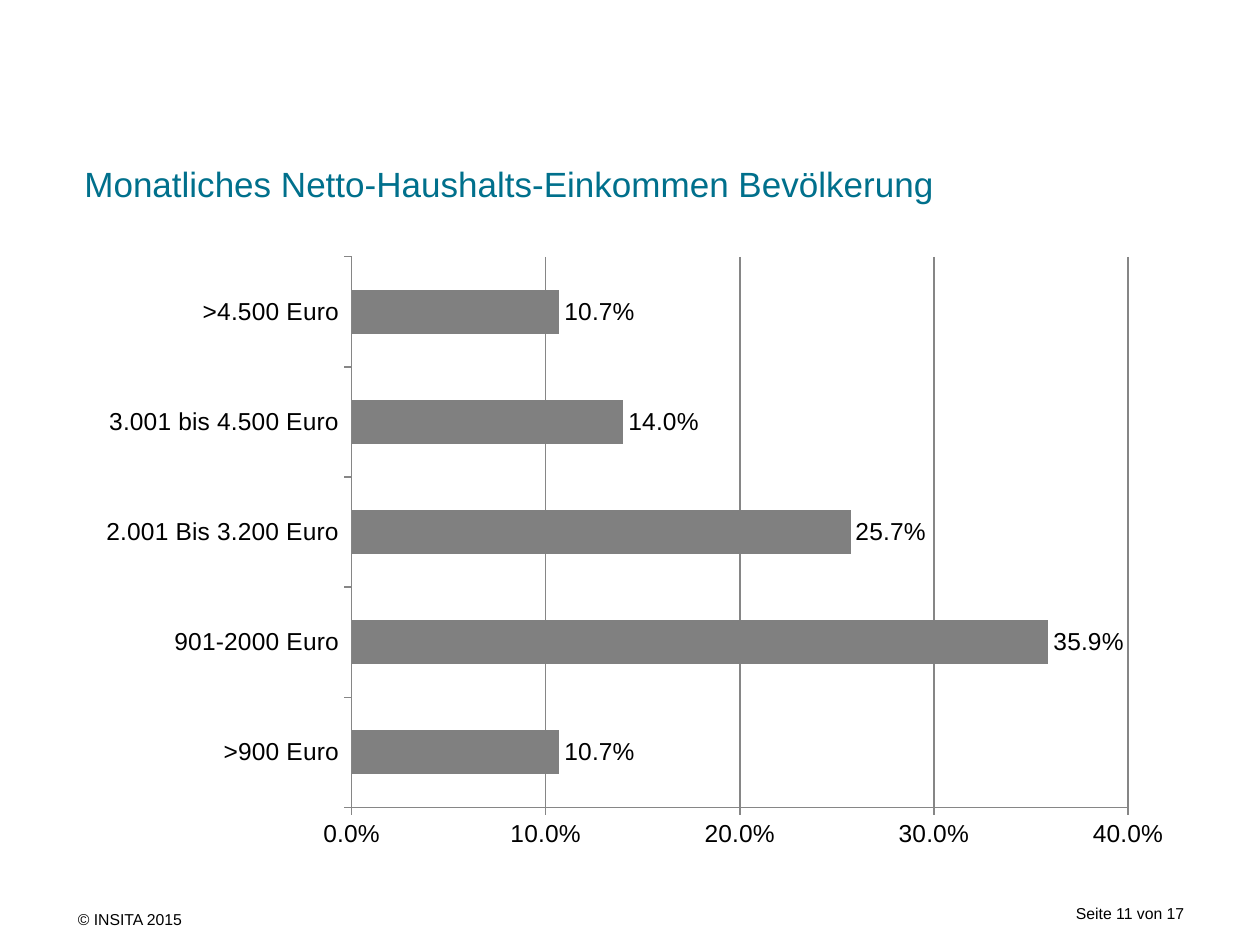
from dataclasses import dataclass

from pptx import Presentation
from pptx.chart.data import CategoryChartData
from pptx.dml.color import RGBColor
from pptx.enum import chart as charts, text
from pptx.util import Cm, Pt


@dataclass(frozen=True)
class Theme:
    font: str = "Arial"
    ink: str = "000000"
    accent: str = "00708C"
    bar: str = "808080"
    line: str = "868686"
    title_size: int = 20
    chart_size: int = 14
    footer_size: int = 9


THEME = Theme()
PERCENT = "0.0%"
INCOME_SHARES = {
    ">900 Euro": 0.107,
    "901-2000 Euro": 0.359,
    "2.001 Bis 3.200 Euro": 0.257,
    "3.001 bis 4.500 Euro": 0.14,
    ">4.500 Euro": 0.107,
}


def box(left, top, width, height):
    return Cm(left), Cm(top), Cm(width), Cm(height)


def format_font(font, size, color):
    font.name = THEME.font
    font.size = Pt(size)
    font.bold = False
    font.color.rgb = RGBColor.from_string(color)


def write_text(shape, content, size, color=THEME.ink, wrap=False, line_spacing=None):
    frame = shape.text_frame
    frame.margin_left = frame.margin_right = frame.margin_top = frame.margin_bottom = 0
    frame.auto_size = text.MSO_AUTO_SIZE.NONE
    frame.word_wrap = wrap
    frame.vertical_anchor = text.MSO_ANCHOR.BOTTOM
    paragraph = frame.paragraphs[0]
    paragraph.alignment = text.PP_ALIGN.LEFT
    paragraph.line_spacing = line_spacing
    run = paragraph.add_run()
    run.text = content
    format_font(run.font, size, color)


def place_title(slide, area, content):
    title = slide.shapes.title
    title.left, title.top, title.width, title.height = area
    write_text(title, content, THEME.title_size, THEME.accent, wrap=True, line_spacing=1.2)


def place_footer(slide, area, copyright_line, page_label):
    left, top, width, height = area
    page_width = Cm(3.1)
    owner = slide.shapes.add_textbox(left, top, Cm(10), height)
    write_text(owner, copyright_line, THEME.footer_size)
    page = slide.shapes.add_textbox(
        left + width - page_width, top - Cm(0.11), page_width, height
    )
    write_text(page, page_label, THEME.footer_size)


def format_axis(axis):
    axis.major_tick_mark = charts.XL_TICK_MARK.OUTSIDE
    axis.minor_tick_mark = charts.XL_TICK_MARK.NONE
    format_font(axis.tick_labels.font, THEME.chart_size, THEME.ink)
    format_line(axis.format.line)


def format_line(line):
    line.width = Pt(0.75)
    line.color.rgb = RGBColor.from_string(THEME.line)


def place_income_chart(slide, area, shares):
    data = CategoryChartData(number_format=PERCENT)
    data.categories = list(shares)
    data.add_series("Series 1", list(shares.values()))
    chart = slide.shapes.add_chart(
        charts.XL_CHART_TYPE.BAR_CLUSTERED, *area, data
    ).chart
    chart.has_legend = False
    chart.has_title = False
    format_font(chart.font, THEME.chart_size, THEME.ink)

    format_axis(chart.category_axis)
    value_axis = chart.value_axis
    format_axis(value_axis)
    value_axis.minimum_scale = 0
    value_axis.maximum_scale = 0.4
    value_axis.major_unit = 0.1
    value_axis.has_major_gridlines = True
    format_line(value_axis.major_gridlines.format.line)
    value_axis.tick_labels.number_format = PERCENT
    value_axis.tick_labels.number_format_is_linked = False

    plot = chart.plots[0]
    plot.gap_width = 150
    plot.vary_by_categories = False
    fill = plot.series[0].format.fill
    fill.solid()
    fill.fore_color.rgb = RGBColor.from_string(THEME.bar)
    plot.has_data_labels = True
    labels = plot.data_labels
    labels.show_value = True
    labels.number_format = PERCENT
    labels.number_format_is_linked = False
    labels.position = charts.XL_LABEL_POSITION.OUTSIDE_END
    format_font(labels.font, THEME.chart_size, THEME.ink)


def main():
    presentation = Presentation()
    presentation.slide_width = Cm(25.4)
    presentation.slide_height = Cm(19.05)
    slide = presentation.slides.add_slide(presentation.slide_layouts[5])
    place_title(
        slide, box(1.7, 0.94, 19.81, 3.18),
        "Monatliches Netto-Haushalts-Einkommen Bevölkerung",
    )
    place_income_chart(slide, box(1.7, 4.93, 22.2, 12.4), INCOME_SHARES)
    place_footer(slide, box(1.57, 18.12, 23.22, 0.6), "© INSITA 2015", "Seite 11 von 17")
    presentation.save("out.pptx")


if __name__ == "__main__":
    main()
